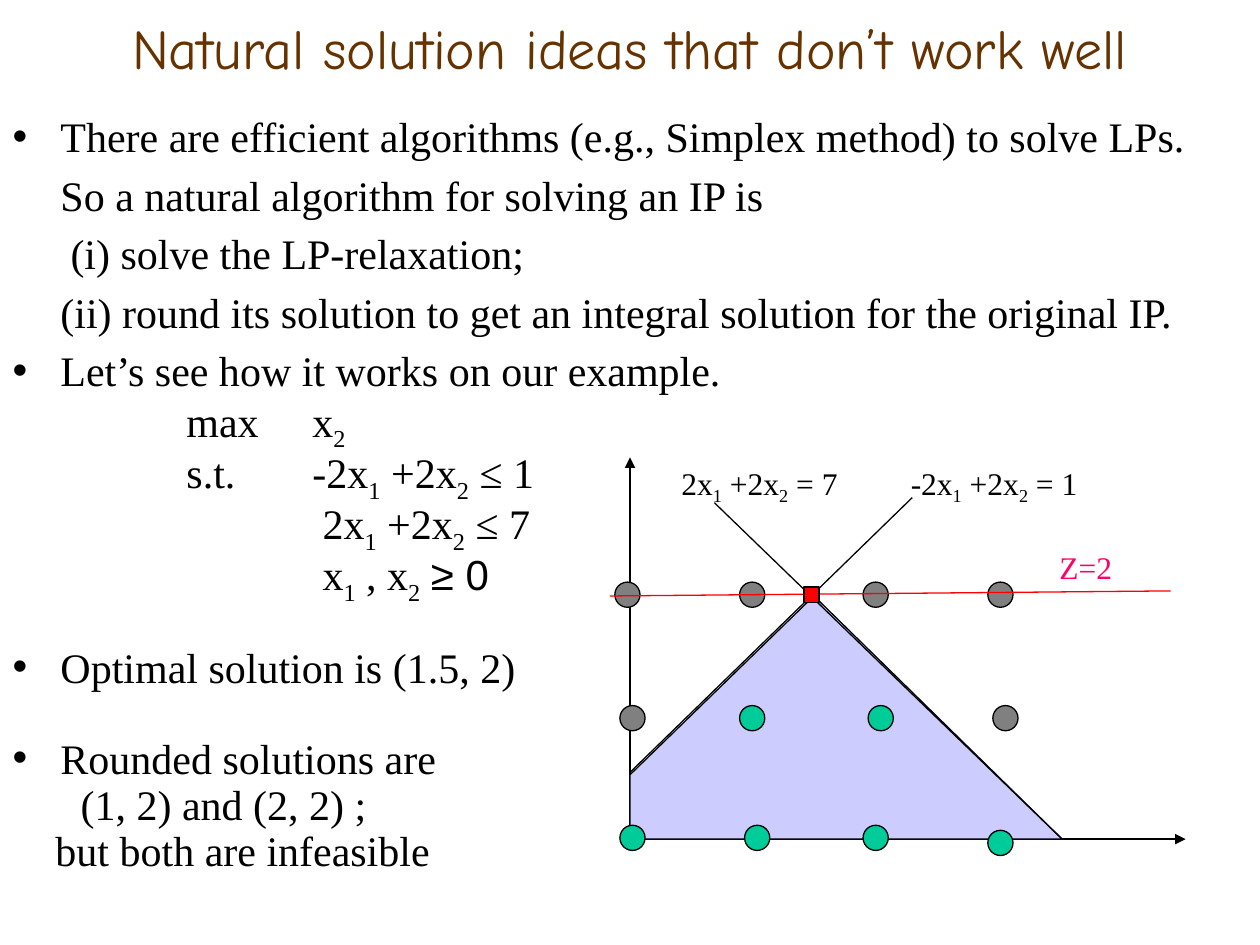
import pptx
import pptx.dml.color
import pptx.enum.shapes
import pptx.enum.text
import pptx.oxml
import pptx.oxml.ns
import pptx.util

Inches, Pt = pptx.util.Inches, pptx.util.Pt
SHAPES = pptx.enum.shapes.MSO_SHAPE
ALIGN = pptx.enum.text.PP_ALIGN
ANCHOR = pptx.enum.text.MSO_ANCHOR
AUTO_SIZE = pptx.enum.text.MSO_AUTO_SIZE
SERIF = "Times New Roman"
BLACK, RED, FEASIBLE, INFEASIBLE = "000000", "FF0000", "00CC99", "808080"


def color(hex_code):
    return pptx.dml.color.RGBColor.from_string(hex_code)


def add_element(parent, tag, **attributes):
    element = pptx.oxml.parse_xml(f"<a:{tag} {pptx.oxml.ns.nsdecls('a')}/>")
    for key, value in attributes.items():
        element.set(key, value)
    parent.append(element)


def apply(target, **values):
    for key, value in values.items():
        setattr(target, key, value)


def place(shape, box):
    for side, length in zip(("left", "top", "width", "height"), box):
        setattr(shape, side, Inches(length))


def write(paragraph, text, size, hex_code=BLACK, font=SERIF):
    """Write text; pieces between underscores are subscripts."""
    for index, piece in enumerate(text.split("_")):
        if piece:
            run = paragraph.add_run()
            run.text = piece
            apply(run.font, name=font, size=Pt(size))
            run.font.color.rgb = color(hex_code)
            if index % 2:
                run.font._element.set("baseline", "-25000")


def paint(shape, fill):
    shape.shadow.inherit = False
    shape.fill.solid()
    shape.fill.fore_color.rgb = color(fill)
    shape.line.color.rgb = color(BLACK)
    shape.line.width = Pt(0.75)


def add_title(slide, box):
    title = slide.shapes.title
    place(title, box)
    apply(title.text_frame, vertical_anchor=ANCHOR.MIDDLE, word_wrap=True,
          auto_size=AUTO_SIZE.NONE)
    heading = title.text_frame.paragraphs[0]
    heading.alignment = ALIGN.CENTER
    write(heading, "Natural solution ideas that don’t work well", 32, "663300", "Comic Neue")


def add_body(slide, box):
    body = slide.placeholders[1]
    place(body, box)
    frame = body.text_frame
    apply(frame, word_wrap=True, auto_size=AUTO_SIZE.NONE, vertical_anchor=ANCHOR.TOP)
    gap, wide_gap = 4.6, 30.7
    bullet, program = (0.38, -0.38), (2.38, -1)
    # Text, (left margin, first-line indent), line spacing, space before
    lines = [
        ("There are efficient algorithms (e.g., Simplex method) to solve LPs.", bullet, 1, gap),
        ("So a natural algorithm for solving an IP is", (0.38, 0), 1, gap),
        ("(i) solve the LP-relaxation;", (0.46, 0), 1, gap),
        ("(ii) round its solution to get an integral solution for the original IP.",
         (0.38, 0), 1, gap),
        ("Let’s see how it works on our example.", bullet, 1, gap),
        ("max\tx_2_", program, 0.75, gap),
        ("s.t.\t-2x_1_ +2x_2_ ≤ 1", program, 0.75, gap),
        ("2x_1_ +2x_2_ ≤ 7", (2.46, 0), 0.75, gap),
        ("x_1_ , x_2_ ", (2.46, 0), 0.75, gap),
        ("Optimal solution is (1.5, 2)", bullet, 0.75, wide_gap),
        ("Rounded solutions are", bullet, 0.75, wide_gap),
        ("(1, 2) and (2, 2) ;", (0.54, 0), 0.75, gap),
        ("but both are infeasible", (0.34, 0), 0.75, gap),
    ]
    for index, (text, indents, spacing, before) in enumerate(lines):
        paragraph = frame.add_paragraph() if index else frame.paragraphs[0]
        apply(paragraph, line_spacing=spacing, space_before=Pt(before),
              space_after=Pt(0), alignment=ALIGN.LEFT)
        properties = paragraph._p.get_or_add_pPr()
        for key, length in zip(("marL", "indent"), indents):
            properties.set(key, str(Inches(length)))
        if indents == bullet:
            add_element(properties, "buChar", char="•")
        else:
            add_element(properties, "buNone")
        write(paragraph, text, 24)
        if text.startswith("x_1_"):
            write(paragraph, "≥ 0", 24, font="Arial")


def add_line(slide, start, end, hex_code=BLACK, arrow=False):
    line = slide.shapes.add_connector(
        pptx.enum.shapes.MSO_CONNECTOR.STRAIGHT, *map(Inches, start + end))
    line.line.color.rgb = color(hex_code)
    line.line.width = Pt(0.75)
    if arrow:
        add_element(line.line._get_or_add_ln(), "tailEnd", type="triangle")
    add_element(line._element.spPr, "effectLst")


def add_label(slide, text, box, hex_code=BLACK):
    label = slide.shapes.add_textbox(*map(Inches, box))
    apply(label.text_frame, word_wrap=True, auto_size=AUTO_SIZE.SHAPE_TO_FIT_TEXT)
    write(label.text_frame.paragraphs[0], text, 18, hex_code)


def add_marker(slide, kind, center, size, fill):
    x, y = center
    marker = slide.shapes.add_shape(
        kind, *map(Inches, (x - size / 2, y - size / 2, size, size)))
    paint(marker, fill)


def add_graph(slide, box):
    left, top, width, height = box

    def at(x, y):
        return left + x, top + y

    # Axes
    origin = at(0, height)
    add_line(slide, origin, at(0, 0), arrow=True)
    add_line(slide, origin, at(width, height), arrow=True)

    # Feasible region
    corners = [tuple(map(Inches, corner)) for corner in
               (origin, at(0, 2.52), at(1.46, 1.1), at(3.43, height))]
    outline = slide.shapes.build_freeform(*corners[0])
    outline.add_line_segments(corners[1:], close=True)
    paint(outline.convert_to_shape(), "CCCCFF")

    # Integer points, row by row: (x, y) and number of the feasible columns
    rows = [
        ([(-0.02, 1.09), (0.97, 1.09), (1.95, 1.09), (2.94, 1.09)], ()),
        ([(0.02, 2.07), (0.97, 2.07), (1.99, 2.07), (2.98, 2.07)], (1, 2)),
        ([(0.02, 3.02), (1.01, 3.02), (1.95, 3.02), (2.94, 3.06)], (0, 1, 2, 3)),
    ]
    for points, feasible in rows:
        for column, point in enumerate(points):
            fill = FEASIBLE if column in feasible else INFEASIBLE
            add_marker(slide, SHAPES.OVAL, at(*point), 0.2, fill)

    # Constraints, objective and optimum
    add_line(slide, at(0, 2.5), at(2.24, 0.32))
    add_line(slide, at(3.43, height), at(0.67, 0.36))
    add_line(slide, at(-0.16, 1.1), at(4.29, 1.06), RED)
    add_marker(slide, SHAPES.RECTANGLE, at(1.44, 1.09), 0.12, RED)

    # Labels
    add_label(slide, "-2x_1_ +2x_2_ = 1", (*at(2.13, 0), 1.69, 0.4))
    add_label(slide, "2x_1_ +2x_2_ = 7", (*at(0.31, 0), 1.69, 0.4))
    add_label(slide, "Z=2", (*at(3.31, 0.67), 0.63, 0.4), "FF0066")


def main():
    deck = pptx.Presentation()
    apply(deck, slide_width=Inches(10), slide_height=Inches(7.5))
    slide = deck.slides.add_slide(deck.slide_layouts[1])
    add_title(slide, (0, 0, 10, 0.75))
    add_body(slide, (0, 0.83, 10, 6.67))
    add_graph(slide, (5, 3.63, 4.41, 3.03))
    deck.save("out.pptx")


if __name__ == "__main__":
    main()
